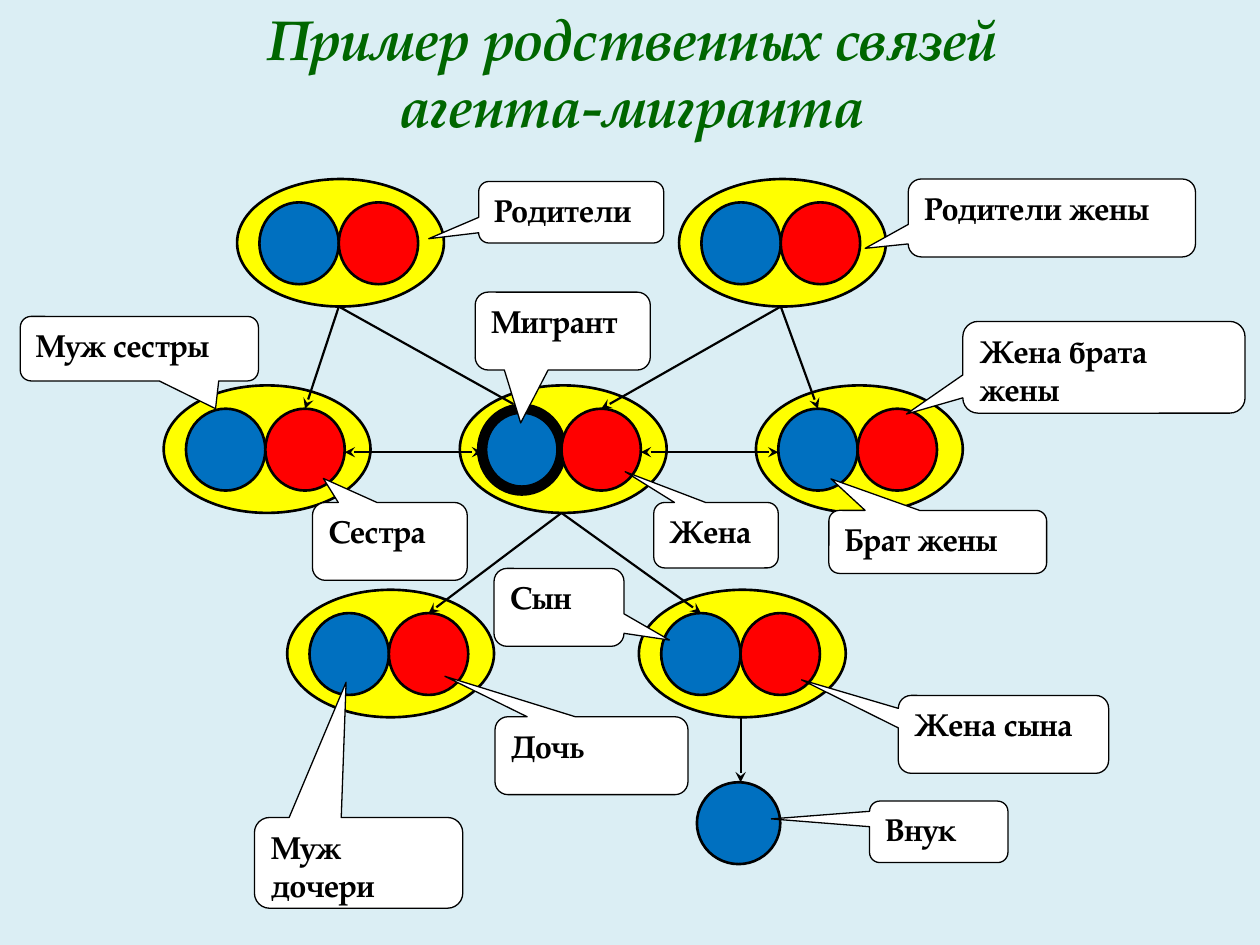
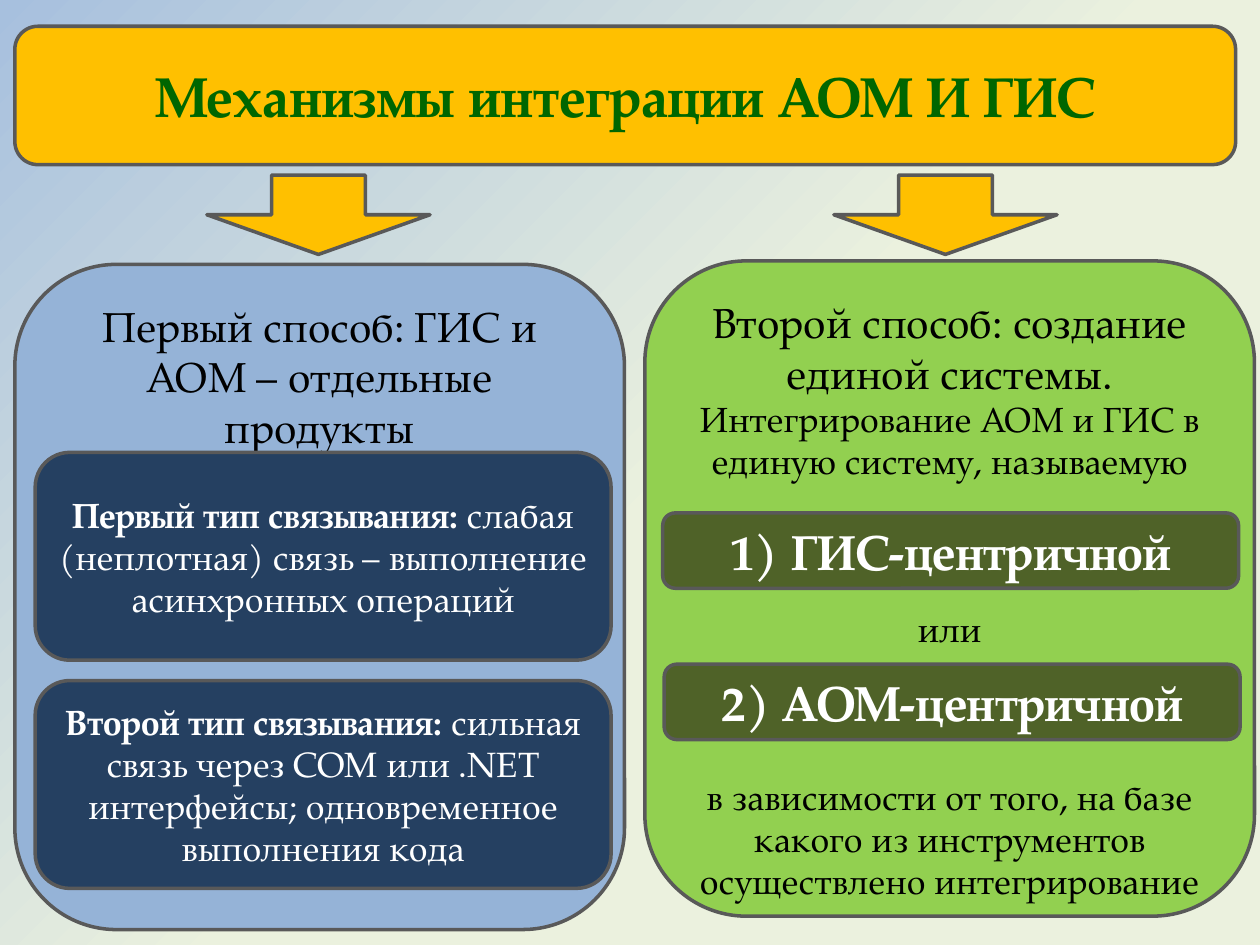
from typing import NamedTuple

from lxml.etree import SubElement
from pptx import Presentation
from pptx.dml.color import RGBColor
from pptx.enum.shapes import MSO_CONNECTOR, MSO_SHAPE as Shape
from pptx.enum.text import MSO_ANCHOR as Anchor, PP_ALIGN as Align
from pptx.oxml.ns import qn
from pptx.util import Cm, Pt

# Shared style
FONT = "TeX Gyre Pagella"
BLACK, WHITE, TITLE = "000000", "FFFFFF", "006600"
MALE, FEMALE, COUPLE = "0070C0", "FF0000", "FFFF00"
AMBER, BLUE, GREEN = "FFC000", "95B3D7", "92D050"
NAVY, OLIVE, FRAME = "254061", "4F6228", "595959"
OVAL_W, OVAL_H = 4.17, 2.57
PERSON_W, PERSON_H = 1.6, 1.65
PERSON_DX, PERSON_DY = 0.45, 0.47


class Run(NamedTuple):
    text: str
    size: float
    color: str = BLACK
    bold: bool = False
    italic: bool = False


class Para(NamedTuple):
    runs: list[Run]
    before: float = 0
    align: Align = Align.CENTER


class Box(NamedTuple):
    left: float
    top: float
    width: float
    height: float


class Couple(NamedTuple):
    left: float
    top: float
    him_width: float = 1.5

    @property
    def bottom(self) -> tuple[float, float]:
        return self.left + PERSON_DX + PERSON_W, self.top + OVAL_H

    def head(self, i: int) -> tuple[float, float]:
        """Top of the husband (0) or the wife (1)."""
        return self.left + PERSON_DX + (i + 0.5) * PERSON_W, self.top + PERSON_DY

    def side(self, i: int) -> tuple[float, float]:
        """Outer edge of the husband (0) or the wife (1)."""
        return (self.left + PERSON_DX + 2 * i * PERSON_W,
                self.top + PERSON_DY + PERSON_H / 2 + 0.05)


class Callout(NamedTuple):
    text: str
    box: Box
    tail: tuple[float, float]


class Panel(NamedTuple):
    box: Box
    fill: str
    paras: list[Para]
    anchor: Anchor = Anchor.MIDDLE


def rgb(color: str) -> RGBColor:
    return RGBColor.from_string(color)


def write(tf, paras: list[Para], anchor: Anchor) -> None:
    tf.word_wrap = True
    tf.vertical_anchor = anchor
    for i, para in enumerate(paras):
        p = tf.add_paragraph() if i else tf.paragraphs[0]
        p.alignment = para.align
        if para.before:
            p.space_before = Pt(para.before)
        for run in para.runs:
            r = p.add_run()
            r.text = run.text
            formats = {"name": FONT, "size": Pt(run.size), "bold": run.bold,
                       "italic": run.italic}
            for name, value in formats.items():
                setattr(r.font, name, value)
            r.font.color.rgb = rgb(run.color)


def add_shape(s, kind: Shape, box: Box, fill: str, line: str, width: float,
              adjust: tuple[float, ...] = ()):
    sp = s.shapes.add_shape(kind, *map(Cm, box))
    sp.shadow.inherit = False
    sp.fill.solid()
    sp.fill.fore_color.rgb = rgb(fill)
    sp.line.color.rgb = rgb(line)
    sp.line.width = Pt(width)
    for i, value in enumerate(adjust):
        sp.adjustments[i] = value
    return sp


def add_couple(s, couple: Couple) -> None:
    add_shape(s, Shape.OVAL, Box(couple.left, couple.top, OVAL_W, OVAL_H),
              COUPLE, BLACK, 1.5)
    for i, (fill, width) in enumerate([(MALE, couple.him_width), (FEMALE, 1.5)]):
        box = Box(couple.left + PERSON_DX + i * PERSON_W, couple.top + PERSON_DY,
                  PERSON_W, PERSON_H)
        add_shape(s, Shape.OVAL, box, fill, BLACK, width)


def add_arrow(s, start: tuple[float, float], end: tuple[float, float],
              ends: tuple[str, ...] = ("tailEnd",)) -> None:
    cx = s.shapes.add_connector(MSO_CONNECTOR.STRAIGHT, *map(Cm, start + end))
    cx.line.color.rgb = rgb(BLACK)
    cx.line.width = Pt(1.25)
    for tag in ends:
        SubElement(cx.line._get_or_add_ln(), qn(f"a:{tag}"), type="stealth")
    SubElement(cx._element.spPr, qn("a:effectLst"))


def add_callout(s, callout: Callout) -> None:
    sp = add_shape(s, Shape.ROUNDED_RECTANGULAR_CALLOUT, callout.box, WHITE, BLACK,
                   0.75, callout.tail)
    label = Run(callout.text, 18, bold=True)
    write(sp.text_frame, [Para([label], align=Align.LEFT)], Anchor.TOP)


def add_panel(s, panel: Panel) -> None:
    sp = add_shape(s, Shape.ROUNDED_RECTANGLE, panel.box, panel.fill, FRAME, 2)
    write(sp.text_frame, panel.paras, panel.anchor)


# Family tree
ROW_1, ROW_2, ROW_3 = 3.61, 7.77, 11.89
PARENTS, WIFE_PARENTS = Couple(4.78, ROW_1), Couple(13.69, ROW_1)
SISTER, MIGRANT, BROTHER = Couple(3.3, ROW_2), Couple(9.27, ROW_2, 6), Couple(15.24, ROW_2)
DAUGHTER, SON = Couple(5.79, ROW_3), Couple(12.88, ROW_3)
COUPLES = [PARENTS, WIFE_PARENTS, SISTER, MIGRANT, BROTHER, DAUGHTER, SON]
GRANDSON = Box(14.05, 15.77, 1.68, 1.65)
# Parent couple, child's couple, place of the child in it
DESCENT = [(PARENTS, SISTER, 1), (PARENTS, MIGRANT, 0), (WIFE_PARENTS, MIGRANT, 1),
           (WIFE_PARENTS, BROTHER, 0), (MIGRANT, DAUGHTER, 1), (MIGRANT, SON, 0)]
SIBLINGS = [(SISTER, MIGRANT), (MIGRANT, BROTHER)]
CALLOUTS = [
    Callout("Мигрант", Box(9.58, 5.89, 3.53, 1.57), (-0.24, 1.18)),
    Callout("Родители", Box(9.65, 3.66, 3.73, 1.24), (-0.77, 0.43)),
    Callout("Родители жены", Box(18.31, 3.61, 5.79, 1.57), (-0.65, 0.39)),
    Callout("Дочь", Box(9.98, 14.45, 3.89, 1.57), (-0.76, -1.02)),
    Callout("Сын", Box(9.96, 11.46, 2.62, 1.57), (0.85, 0.42)),
    Callout("Муж дочери", Box(5.13, 16.48, 4.2, 1.83), (-0.06, -1.99)),
    Callout("Жена сына", Box(18.11, 14.02, 4.24, 1.57), (-0.96, -0.7)),
    Callout("Внук", Box(17.53, 16.15, 2.79, 1.24), (-1.21, -0.21)),
    Callout("Сестра", Box(6.3, 10.13, 3.12, 1.57), (-0.43, -0.81)),
    Callout("Жена", Box(13.18, 10.13, 2.51, 1.32), (-0.73, -0.97)),
    Callout("Брат жены", Box(16.71, 10.29, 4.39, 1.27), (-0.49, -1)),
    Callout("Жена брата жены", Box(19.41, 6.48, 5.69, 1.85), (-0.7, 0.51)),
    Callout("Муж сестры", Box(0.41, 6.38, 4.8, 1.3), (0.32, 0.93)),
]


def family_slide(s) -> None:
    s.background.fill.solid()
    s.background.fill.fore_color.rgb = rgb("DBEEF4")
    for couple in COUPLES:
        add_couple(s, couple)
    add_shape(s, Shape.OVAL, GRANDSON, MALE, BLACK, 1.5)

    # Kinship arrows
    for parent, child, i in DESCENT:
        add_arrow(s, parent.bottom, child.head(i))
    for left, right in SIBLINGS:
        add_arrow(s, left.side(1), right.side(0), ("headEnd", "tailEnd"))
    add_arrow(s, SON.bottom, (SON.bottom[0], GRANDSON.top))

    for callout in CALLOUTS:
        add_callout(s, callout)

    # Title
    tb = s.shapes.add_textbox(*map(Cm, Box(0.1, -0.05, 25.3, 3)))
    lines = ["Пример родственных связей", "агента-мигранта"]
    write(tb.text_frame, [Para([Run(t, 32, TITLE, True, True)]) for t in lines],
          Anchor.MIDDLE)


# Integration panels
WAY_W, INNER_W = 12.29, 11.61
SKIP = 72  # room for an inner panel, in points


def binding(top: float, name: str, text: str) -> Panel:
    runs = [Run(name + " ", 20, WHITE, True), Run(text, 20, WHITE)]
    return Panel(Box(0.71, top, INNER_W, 4.19), NAVY, [Para(runs)])


def centric(left: float, top: float, text: str) -> Panel:
    return Panel(Box(left, top, INNER_W, 1.52), OLIVE,
                 [Para([Run(text, 28, WHITE, True)])])


PANELS = [
    Panel(Box(0.3, 0.53, 24.61, 2.79), AMBER,
          [Para([Run("Механизмы интеграции АОМ И ГИС", 32, TITLE, True)])]),
    Panel(Box(0.3, 5.33, WAY_W, 13.41), BLUE,
          [Para([Run("Первый способ: ГИС и АОМ – отдельные продукты", 24)])], Anchor.TOP),
    Panel(Box(13, 5.26, WAY_W, 13.21), GREEN, [
        Para([Run("Второй способ: создание единой системы.", 24)]),
        Para([Run("Интегрирование АОМ и ГИС в единую систему, называемую", 20)]),
        Para([Run("или", 20)], SKIP),
        Para([Run("в зависимости от того, на базе какого из инструментов "
                  "осуществлено интегрирование", 20)], SKIP),
    ], Anchor.TOP),
    binding(9.12, "Первый тип связывания:",
            "слабая (неплотная) связь – выполнение асинхронных операций"),
    binding(13.72, "Второй тип связывания:",
            "сильная связь через COM или .NET интерфейсы; одновременное выполнения кода"),
    centric(13.36, 10.34, "1) ГИС-центричной"),
    centric(13.39, 13.39, "2) АОМ-центричной"),
]


def integration_slide(s) -> None:
    fill = s.background.fill
    fill.gradient()
    fill.gradient_angle = 315
    for stop, (position, color) in zip(fill.gradient_stops,
                                       [(0, "A7C0DE"), (0.53, "EBF1DE")]):
        stop.position = position
        stop.color.rgb = rgb(color)
    for panel in PANELS:
        add_panel(s, panel)
    for left in (4.17, 16.81):
        add_shape(s, Shape.DOWN_ARROW, Box(left, 3.53, 4.5, 1.6), AMBER, FRAME, 2,
                  (0.42, 0.5))


def main() -> None:
    prs = Presentation()
    prs.slide_width, prs.slide_height = Cm(25.4), Cm(19.05)
    for build in (family_slide, integration_slide):
        build(prs.slides.add_slide(prs.slide_layouts[6]))
    prs.save("out.pptx")


if __name__ == "__main__":
    main()
